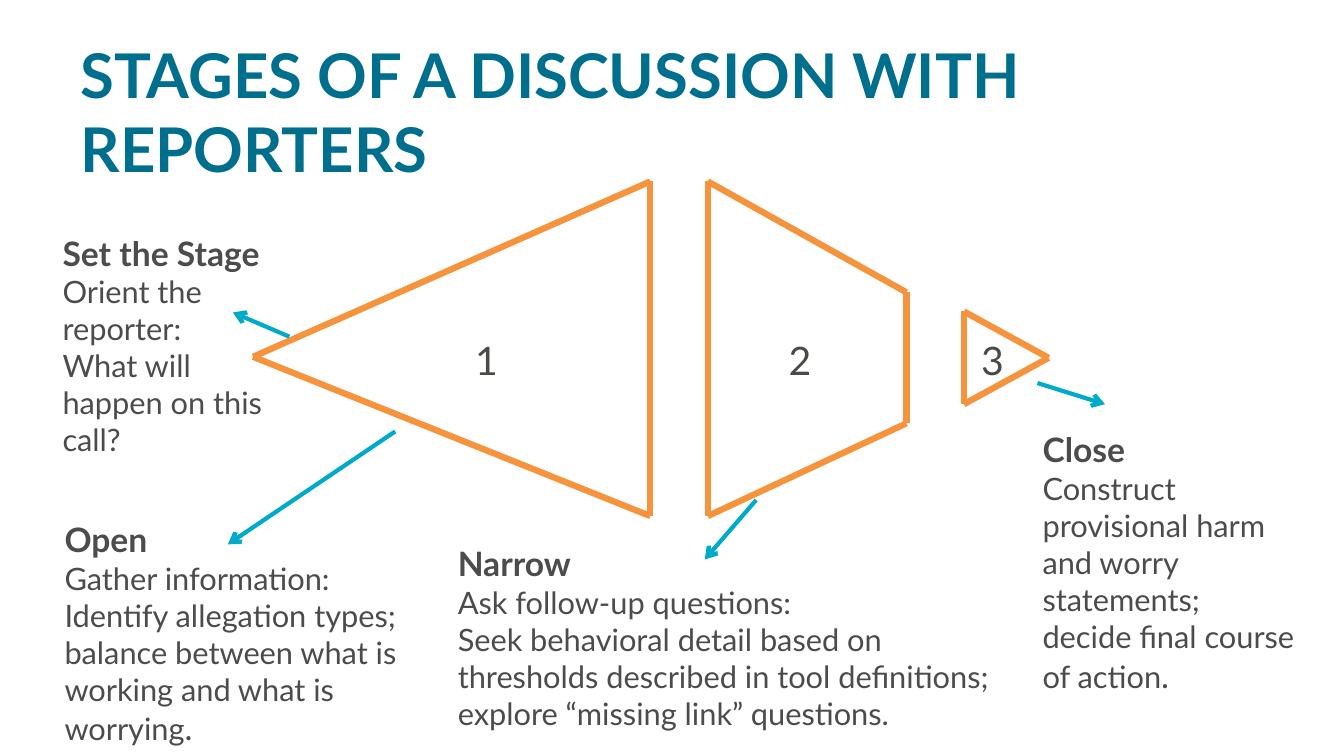
from lxml import etree
from pptx import Presentation
from pptx.dml.color import RGBColor
from pptx.enum.shapes import MSO_CONNECTOR
from pptx.enum.text import MSO_ANCHOR, PP_ALIGN
from pptx.oxml.ns import qn
from pptx.util import Emu, Pt

STRAIGHT = MSO_CONNECTOR.STRAIGHT
TOP, MIDDLE = MSO_ANCHOR.TOP, MSO_ANCHOR.MIDDLE
LEFT, CENTER = PP_ALIGN.LEFT, PP_ALIGN.CENTER

EMU_PER_PX = 9144  # 100 px to the inch
FONT = "Lato"
TEAL = RGBColor(0x00, 0x6E, 0x8D)
CYAN = RGBColor(0x00, 0xAB, 0xCA)
ORANGE = RGBColor(0xF6, 0x94, 0x3D)
GRAY = RGBColor(0x4C, 0x4C, 0x4E)
NUMBER_GRAY = RGBColor(0x48, 0x4C, 0x45)

TITLE = {"size": Pt(44), "bold": True, "color": TEAL}
HEADING = {"size": Pt(24), "bold": True, "color": GRAY}
BODY = {"size": Pt(22), "bold": False, "color": GRAY}
FULL_STOP = {**BODY, "size": Pt(24)}
NUMBER = {"size": Pt(28), "bold": False, "color": NUMBER_GRAY}

# Each stage: box, heading, then paragraphs made of (text, format) spans
STAGES = [
    ((57, 231, 219, 254), "Set the Stage", [
        [("Orient the reporter:", BODY)],
        [("What will happen on this call?", BODY)]]),
    ((59, 515, 356, 128), "Open", [
        [("Gather information: Identify allegation types; balance between "
          "what is working and what is worrying", BODY), (".", FULL_STOP)]]),
    ((449, 539, 569, 202), "Narrow", [
        [("Ask follow-up questions:", BODY)],
        [("Seek behavioral detail based on thresholds described in tool "
          "definitions; explore “missing link” questions.", BODY)]]),
    ((1029, 426, 282, 246), "Close", [
        [("Construct provisional harm and worry statements;", BODY)],
        [("decide final course of action", BODY), (".", FULL_STOP)]]),
]

# Each funnel section: corners relative to its box, and the number's left edge
SECTIONS = [
    ((251, 180), [(394, 0), (394, 332), (0, 174)], 198),
    ((702, 180), [(0, 0), (197, 110), (197, 240), (0, 332)], 58),
    ((956, 309), [(0, 0), (84, 46), (0, 92)], -5),
]
NUMBER_TOP, NUMBER_WIDTH, NUMBER_HEIGHT = 334, 67, 42

POINTERS = [
    ((287, 334), (231, 310)),
    ((392, 428), (226, 540)),
    ((750, 496), (699, 555)),
    ((1029, 380), (1096, 401)),
]


def px(length):
    return Emu(length * EMU_PER_PX)


def add_text(page, box, paragraphs, insets, align=LEFT, anchor=TOP):
    frame = page.shapes.add_textbox(*map(px, box)).text_frame
    frame.word_wrap = True
    frame.vertical_anchor = anchor
    for side, inset in zip(("left", "top", "right", "bottom"), insets):
        setattr(frame, f"margin_{side}", px(inset))
    for index, spans in enumerate(paragraphs):
        para = frame.add_paragraph() if index else frame.paragraphs[0]
        para.alignment = align
        for text, style in spans:
            span = para.add_run()
            span.text = text
            span.font.name = FONT
            for name, value in style.items():
                if name == "color":
                    span.font.color.rgb = value
                else:
                    setattr(span.font, name, value)


def add_line(page, start, end, color, width, arrow=False):
    connector = page.shapes.add_connector(STRAIGHT, *map(px, start + end))
    connector.line.color.rgb = color
    connector.line.width = Pt(width)
    if arrow:
        outline = connector.line._get_or_add_ln()
        etree.SubElement(outline, qn("a:tailEnd"), type="arrow")
    etree.SubElement(connector._element.spPr, qn("a:effectLst"))


def add_title(page, box):
    title = [("STAGES OF A DISCUSSION WITH REPORTERS", TITLE)]
    add_text(page, box, [title], (10, 5, 10, 5), anchor=MIDDLE)


def add_stage(page, box, heading, paragraphs):
    add_text(page, box, [[(heading, HEADING)], *paragraphs], (5, 0, 7, 0))


def add_section(page, origin, corners, number, number_left):
    left, top = origin
    points = [(left + x, top + y) for x, y in corners]
    for start, end in zip(points, points[1:] + points[:1]):
        add_line(page, start, end, ORANGE, 4.5)
    number_box = (left + number_left, NUMBER_TOP, NUMBER_WIDTH, NUMBER_HEIGHT)
    add_text(page, number_box, [[(str(number), NUMBER)]], (3, 0, 3, 0), CENTER)


def main():
    deck = Presentation()
    deck.slide_width, deck.slide_height = px(1333), px(750)
    page = deck.slides.add_slide(deck.slide_layouts[6])

    # Title
    add_title(page, (70, 40, 1205, 140))
    # Stage descriptions
    for box, heading, paragraphs in STAGES:
        add_stage(page, box, heading, paragraphs)
    # Numbered funnel sections
    for number, (origin, corners, number_left) in enumerate(SECTIONS, 1):
        add_section(page, origin, corners, number, number_left)
    # Arrows from the funnel to the descriptions
    for start, end in POINTERS:
        add_line(page, start, end, CYAN, 3, arrow=True)

    deck.save("out.pptx")


if __name__ == "__main__":
    main()
